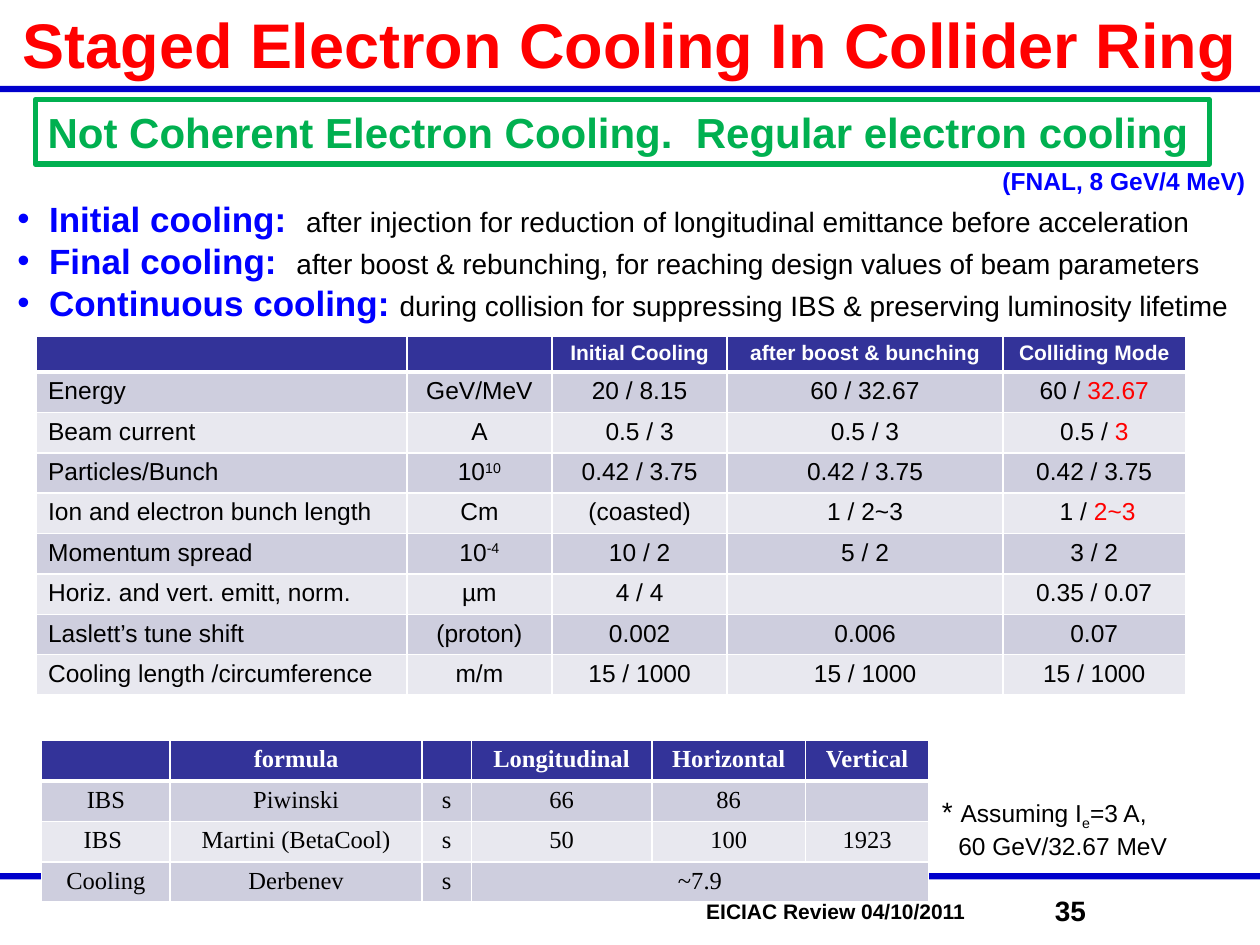
import pptx
import pptx.util
import pptx.dml.color
import pptx.enum.shapes
import pptx.enum.text
import pptx.oxml.ns
import lxml.etree

Cm = pptx.util.Cm
ALIGN = pptx.enum.text.PP_ALIGN
ANCHOR = pptx.enum.text.MSO_ANCHOR
RED, BLUE, RULE_BLUE, GREEN = "FF0000", "0000FF", "0000CC", "00B050"
NAVY, BANDS, WHITE = "333399", ("CECEDE", "E8E8EF"), "FFFFFF"


def color(hex_string):
    return pptx.dml.color.RGBColor.from_string(hex_string)


def child(parent, tag, **attributes):
    return lxml.etree.SubElement(parent, pptx.oxml.ns.qn(tag), attributes)


def add_run(paragraph, text, size=14, ink="000000", bold=False, face="Arial", baseline=0):
    run = paragraph.add_run()
    run.text = text
    run.font.size = pptx.util.Pt(size)
    run.font.bold = bold
    run.font.name = face
    run.font.color.rgb = color(ink)
    if baseline:
        run._r.get_or_add_rPr().set("baseline", str(baseline * 1000))


def hang(paragraph, indent, bullet=None):
    properties = paragraph._p.get_or_add_pPr()
    properties.set("marL", str(Cm(indent)))
    properties.set("indent", str(-Cm(indent)))
    if bullet:
        child(properties, "a:buFont", typeface="Arial")
        child(properties, "a:buChar", char=bullet)


def add_text(slide, box, paragraphs, align=ALIGN.LEFT, anchor=ANCHOR.TOP,
             indent=0, bullet=None, wrap=True):
    frame = slide.shapes.add_textbox(*map(Cm, box)).text_frame
    frame.word_wrap = wrap
    frame.vertical_anchor = anchor
    for index, runs in enumerate(paragraphs):
        paragraph = frame.add_paragraph() if index else frame.paragraphs[0]
        paragraph.alignment = align
        if indent:
            hang(paragraph, indent, bullet)
        for text, style in runs:
            add_run(paragraph, text, **style)


def add_rule(slide, box):
    rule = slide.shapes.add_shape(pptx.enum.shapes.MSO_SHAPE.RECTANGLE, *map(Cm, box))
    rule.shadow.inherit = False
    rule.fill.solid()
    rule.fill.fore_color.rgb = color(RULE_BLUE)
    rule.line.fill.background()


def add_title(slide, box):
    left, top, width, height = box
    title = [("Staged Electron Cooling In Collider Ring", dict(size=36, ink=RED, bold=True))]
    add_text(slide, (left, top, width, height), [title], ALIGN.CENTER, ANCHOR.MIDDLE)
    add_rule(slide, (left, top + height, width, 0.13))


def add_footer(slide, box):
    left, top, width, height = box
    add_rule(slide, (left, top, width, 0.13))
    add_text(slide, (left + 13.41, top + 0.38, 6.88, 0.76),
             [[("EICIAC Review 04/10/2011", dict(size=12, bold=True))]], ALIGN.CENTER)
    add_text(slide, (left + 20.45, top + 0.28, 2.26, 0.94),
             [[("35", dict(size=16, bold=True))]], ALIGN.CENTER)


def add_banner(slide, box):
    left, top, width, height = box
    banner = slide.shapes.add_shape(pptx.enum.shapes.MSO_SHAPE.RECTANGLE, *map(Cm, box))
    banner.shadow.inherit = False
    banner.fill.background()
    banner.line.color.rgb = color(GREEN)
    banner.line.width = pptx.util.Pt(3)
    banner.text_frame.word_wrap = True
    headline = banner.text_frame.paragraphs[0]
    headline.alignment = ALIGN.LEFT
    hang(headline, 0.33)
    add_run(headline, "Not Coherent Electron Cooling.  Regular electron cooling", 24, GREEN, True)
    add_text(slide, (left + 19.25, top + 1.22, 5.44, 0.86),
             [[("(FNAL, 8 GeV/4 MeV)", dict(ink=BLUE, bold=True))]], indent=0.33, wrap=False)


def add_stages(slide, box):
    stages = [
        ("Initial cooling:  ",
         "after injection for reduction of longitudinal emittance before acceleration"),
        ("Final cooling:  ",
         "after boost & rebunching, for reaching design values of beam parameters"),
        ("Continuous cooling: ",
         "during collision for suppressing IBS & preserving luminosity lifetime"),
    ]
    add_text(slide, box,
             [[(stage, dict(size=20, ink=BLUE, bold=True)), (purpose, dict(size=16))]
              for stage, purpose in stages], indent=0.64, bullet="•")


def border_cell(cell, bottom_width):
    properties = cell._tc.get_or_add_tcPr()
    widths = {"a:lnL": 1, "a:lnR": 1, "a:lnT": 1, "a:lnB": bottom_width}
    for index, (side, width) in enumerate(widths.items()):
        line = child(properties, side, w=str(pptx.util.Pt(width)))
        child(child(line, "a:solidFill"), "a:srgbClr", val=WHITE)
        properties.insert(index, line)


def add_grid(slide, box, columns, row_heights, rows, face, header_size, left_labels=False):
    frame = slide.shapes.add_table(len(rows), len(columns), *map(Cm, box))
    grid = frame.table
    for column, width in zip(grid.columns, columns):
        column.width = Cm(width)
    for index, (values, height) in enumerate(zip(rows, row_heights)):
        grid.rows[index].height = Cm(height)
        header = index == 0
        base = dict(size=header_size if header else 14, bold=header, face=face,
                    ink=WHITE if header else "000000")
        for position, value in enumerate(values):
            cell = grid.cell(index, position)
            cell.margin_left = cell.margin_right = Cm(0.23)
            cell.margin_top = cell.margin_bottom = Cm(0.11)
            cell.fill.solid()
            cell.fill.fore_color.rgb = color(NAVY if header else BANDS[(index - 1) % 2])
            border_cell(cell, 3 if header else 1)
            paragraph = cell.text_frame.paragraphs[0]
            paragraph.alignment = ALIGN.LEFT if left_labels and position == 0 else ALIGN.CENTER
            if not value:
                child(paragraph._p, "a:endParaRPr", sz=str(base["size"] * 100))
                continue
            for text, style in [(value, {})] if isinstance(value, str) else value:
                add_run(paragraph, text, **{**base, **style})
    return grid


def add_parameters(slide, box):
    red, power = dict(ink=RED), dict(baseline=30)
    rows = [
        ("", "", "Initial Cooling", "after boost & bunching", "Colliding Mode"),
        ("Energy", "GeV/MeV", "20 / 8.15", "60 / 32.67", [("60 / ", {}), ("32.67", red)]),
        ("Beam current", "A", "0.5 / 3", "0.5 / 3", [("0.5 / ", {}), ("3", red)]),
        ("Particles/Bunch", [("10", {}), ("10", power)], *["0.42 / 3.75"] * 3),
        ("Ion and electron bunch length", "Cm", "(coasted)", "1 / 2~3",
         [(" 1 / ", {}), ("2~3", red)]),
        ("Momentum spread", [("10", {}), ("-4", power)], "10 / 2", "5 / 2", "3 / 2"),
        ("Horiz. and vert. emitt, norm.", "µm", "4 / 4", "", "0.35 / 0.07"),
        ("Laslett’s tune shift", "(proton)", "0.002", "0.006", "0.07"),
        ("Cooling length /circumference", "m/m", *["15 / 1000"] * 3),
    ]
    add_grid(slide, box, (7.46, 2.93, 3.53, 5.56, 3.68), [0.72] + [0.81] * 8,
             rows, "Arial", 12, left_labels=True)


def add_rates(slide, box):
    left, top, width, height = box
    rows = [
        ("", "formula", "", "Longitudinal", "Horizontal", "Vertical"),
        ("IBS", "Piwinski", "s", "66", "86", ""),
        ("IBS ", "Martini (BetaCool)", "s", "50", "100", "1923"),
        ("Cooling", "Derbenev", "s", "~7.9", "", ""),
    ]
    rates = add_grid(slide, box, (2.59, 5.08, 0.99, 3.64, 3.1, 2.48), [0.8] * 4,
                     rows, "Times New Roman", 14)
    rates.cell(3, 3).merge(rates.cell(3, 5))
    note = [("* ", dict(size=16)), ("Assuming I", {}), ("e", dict(baseline=-25)),
            ("=3 A, 60 GeV/32.67 MeV", {})]
    add_text(slide, (left + width + 0.02, top + 0.96, 5.25, 1.52), [note], indent=0.33)


def main():
    deck = pptx.Presentation()
    deck.slide_width, deck.slide_height = Cm(25.4), Cm(19.05)
    slide = deck.slides.add_slide(deck.slide_layouts[6])
    add_title(slide, (0, 0, 25.4, 1.73))
    add_footer(slide, (0, 17.6, 25.4, 1.45))
    add_rates(slide, (0.84, 14.93, 17.88, 3.2))
    add_parameters(slide, (0.74, 6.77, 23.16, 7.2))
    add_stages(slide, (0.1, 3.86, 25.07, 2.82))
    add_banner(slide, (0.71, 2.01, 23.67, 1.3))
    deck.save("out.pptx")


if __name__ == "__main__":
    main()
